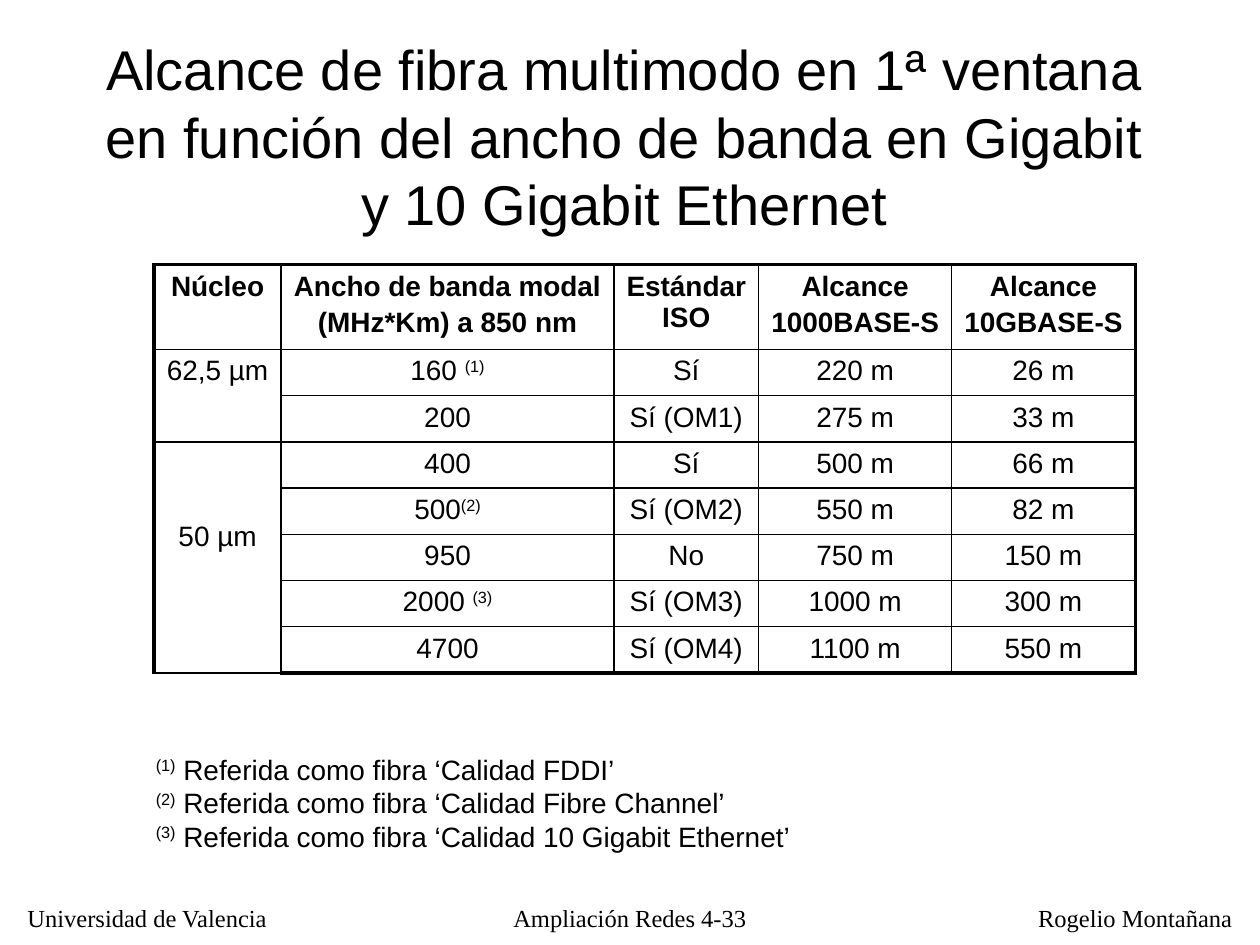
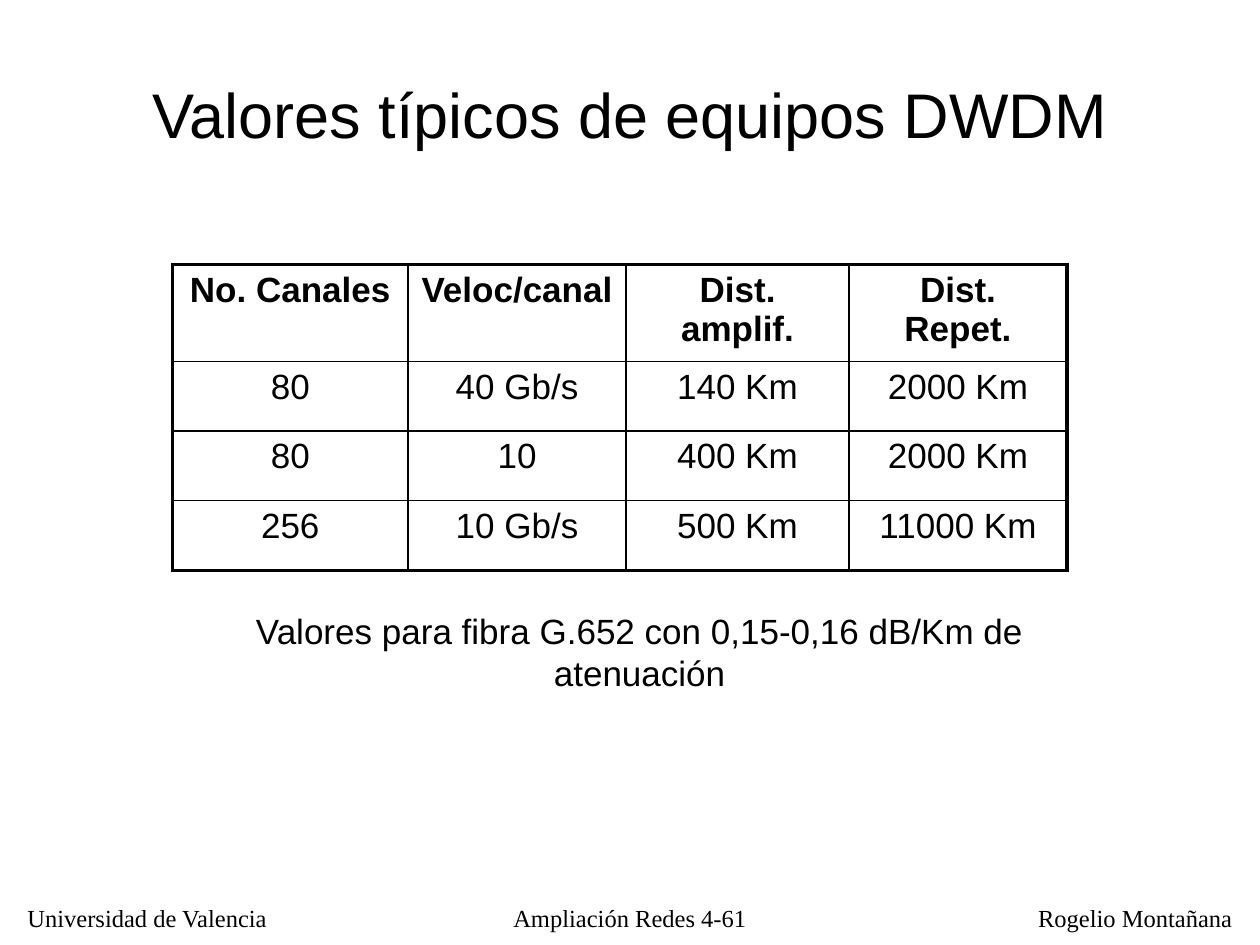
"""Build two slides with tables on the reach of optical fibre."""
from dataclasses import dataclass
from typing import Any

import pptx
import pptx.dml.color
import pptx.enum.text
import pptx.oxml
import pptx.oxml.ns
import pptx.util

Pt = pptx.util.Pt
ALIGN = pptx.enum.text.PP_ALIGN
ANCHOR = pptx.enum.text.MSO_ANCHOR
INK = "000000"
SANS = "Arial"
SERIF = "Times New Roman"
THICK, THIN = 2.25, 1


@dataclass
class Style:
    """Look of a piece of text."""
    size: float
    name: str = SANS
    bold: bool = False
    align: Any = ALIGN.CENTER
    gap: float = 0


@dataclass
class Label:
    """Text box with its place in points."""
    text: str
    left: float
    top: float
    width: float
    height: float
    style: Style
    wrap: bool = True
    anchor: Any = ANCHOR.TOP


@dataclass
class Grid:
    """Table with its place, sizes and cell texts."""
    left: float
    top: float
    cols: list[float]
    rows: list[float]
    size: float
    cells: list[list[str]]


@dataclass
class Merge:
    """Run of rows joined in the first column."""
    first: int
    last: int
    inset: float = 3.6


FOOT = Style(14, SERIF)
SIDE = Style(14, SERIF, align=ALIGN.LEFT)
NOTE = Style(16, align=ALIGN.LEFT)

REACH = Grid(
    88, 151.2, [72.7, 190.1, 82.8, 110.2, 105.1],
    [45.7, 25.1, 25.1, 25.1, 26.3, 25.1, 26.3, 25.1], 16,
    [
        ["Núcleo", "Ancho de banda modal\n(MHz*Km) a 850 nm", "Estándar ISO",
         "Alcance\n1000BASE-S", "Alcance\n10GBASE-S"],
        ["62,5 µm", "160 ^(1)^", "Sí", "220 m", "26 m"],
        ["", "200", "Sí (OM1)", "275 m", "33 m"],
        ["50 µm", "400", "Sí", "500 m", "66 m"],
        ["", "500^(2)^", "Sí (OM2)", "550 m", "82 m"],
        ["", "950", "No", "750 m", "150 m"],
        ["", "2000 ^(3)^", "Sí (OM3)", "1000 m", "300 m"],
        ["", "4700", "Sí (OM4)", "1100 m", "550 m"],
    ])
CORES = [Merge(1, 2), Merge(3, 7, 45.3)]

DWDM = Grid(
    98.6, 151.2, [134.6, 124.6, 127.4, 124.6], [51.4, 39.8, 39.8, 39.8], 20,
    [
        ["No. Canales", "Veloc/canal", "Dist. amplif.", "Dist. Repet."],
        ["80", "40 Gb/s", "140 Km", "2000 Km"],
        ["80", "10", "400 Km", "2000 Km"],
        ["256", "10 Gb/s", "500 Km", "11000 Km"],
    ])

NOTES = "\n".join(
    f"^({num})^ Referida como fibra ‘Calidad {kind}’"
    for num, kind in enumerate(["FDDI", "Fibre Channel", "10 Gigabit Ethernet"], 1))


def paint(code: str) -> pptx.dml.color.RGBColor:
    """Turn a hex string into a colour."""
    return pptx.dml.color.RGBColor.from_string(code)


def apply(item: Any, form: dict[str, Any]) -> None:
    """Set each attribute named in the dict."""
    for key, value in form.items():
        setattr(item, key, value)


def add_run(para: Any, text: str, style: Style, raised: bool) -> None:
    """Add one run, raised if it is a note mark."""
    run = para.add_run()
    run.text = text
    apply(run.font, {"size": Pt(style.size), "name": style.name, "bold": style.bold})
    run.font.color.rgb = paint(INK)
    if raised:
        run._r.get_or_add_rPr().set("baseline", "30000")


def write(frame: Any, text: str, style: Style) -> None:
    """Fill a frame: newline splits paragraphs, carets enclose raised marks."""
    for row, line in enumerate(text.split("\n")):
        para = frame.add_paragraph() if row else frame.paragraphs[0]
        apply(para, {"alignment": style.align, "space_before": Pt(style.gap if row else 0)})
        for num, part in enumerate(line.split("^")):
            for turn, piece in enumerate(part.split("\v")):
                if turn:
                    para.add_line_break()
                if piece:
                    add_run(para, piece, style, num % 2 == 1)


def draw_label(slide: Any, label: Label) -> None:
    """Draw a text box."""
    place = (label.left, label.top, label.width, label.height)
    frame = slide.shapes.add_textbox(*map(Pt, place)).text_frame
    apply(frame, {"word_wrap": label.wrap, "vertical_anchor": label.anchor})
    write(frame, label.text, label.style)


def edge(cell: Any, sides: dict[str, float]) -> None:
    """Give a cell its border lines, in the order left, right, top, bottom."""
    props = cell._tc.get_or_add_tcPr()
    for spot, (side, width) in enumerate(sides.items()):
        props.insert(spot, pptx.oxml.parse_xml(
            f'<a:ln{side} {pptx.oxml.ns.nsdecls("a")} w="{int(Pt(width))}">'
            f'<a:solidFill><a:srgbClr val="{INK}"/></a:solidFill></a:ln{side}>'))


def draw_grid(slide: Any, grid: Grid, joins: list[Merge]) -> None:
    """Draw a table with a thick frame and thin inner lines."""
    high, wide = len(grid.rows), len(grid.cols)
    place = (grid.left, grid.top, sum(grid.cols), sum(grid.rows))
    table = slide.shapes.add_table(high, wide, *map(Pt, place)).table
    apply(table, {"first_row": False, "horz_banding": False})
    for col, width in zip(table.columns, grid.cols):
        col.width = Pt(width)
    for row, height in zip(table.rows, grid.rows):
        row.height = Pt(height)
    for y, line in enumerate(grid.cells):
        for x, text in enumerate(line):
            cell = table.cell(y, x)
            cell.fill.background()
            tests = {"L": x == 0, "R": x == wide - 1, "T": y == 0, "B": y == high - 1}
            edge(cell, {side: THICK if rim else THIN for side, rim in tests.items()})
            if text:
                write(cell.text_frame, text, Style(grid.size, bold=y == 0, gap=2.8))
    for join in joins:
        cell = table.cell(join.first, 0)
        cell.merge(table.cell(join.last, 0))
        cell.margin_top = Pt(join.inset)


def add_page(deck: Any, page: int, title: Label, grid: Grid, joins: list[Merge],
             note: Label) -> None:
    """Add a slide with title, table, note and footers."""
    slide = deck.slides.add_slide(deck.slide_layouts[6])
    draw_label(slide, Label("Universidad de Valencia", 8.6, 512.6, 153.4, 24, SIDE, False))
    draw_label(slide, Label("Rogelio Montañana", 586.1, 512.6, 125.3, 24, SIDE, False))
    draw_label(slide, title)
    draw_grid(slide, grid, joins)
    draw_label(slide, note)
    draw_label(slide, Label(f"Ampliación Redes 4-{page}", 280.8, 512.6, 158.4, 22.3, FOOT))


def main() -> None:
    """Build and save the deck."""
    deck = pptx.Presentation()
    apply(deck, {"slide_width": Pt(720), "slide_height": Pt(540)})
    add_page(
        deck, 33,
        Label("Alcance de fibra multimodo en 1ª ventana\v"
              "en función del ancho de banda en Gigabit y 10 Gigabit Ethernet",
              48, 24, 618, 107, Style(32), anchor=ANCHOR.MIDDLE),
        REACH, CORES,
        Label(NOTES, 82, 426.2, 380, 65, NOTE, False))
    add_page(
        deck, 61,
        Label("Valores típicos de equipos DWDM", 54, 20, 612, 90, Style(36),
              anchor=ANCHOR.MIDDLE),
        DWDM, [],
        Label("Valores para fibra G.652 con 0,15-0,16 dB/Km de atenuación",
              92, 344.2, 547, 56, Style(20), anchor=ANCHOR.MIDDLE))
    deck.save("out.pptx")


if __name__ == "__main__":
    main()
